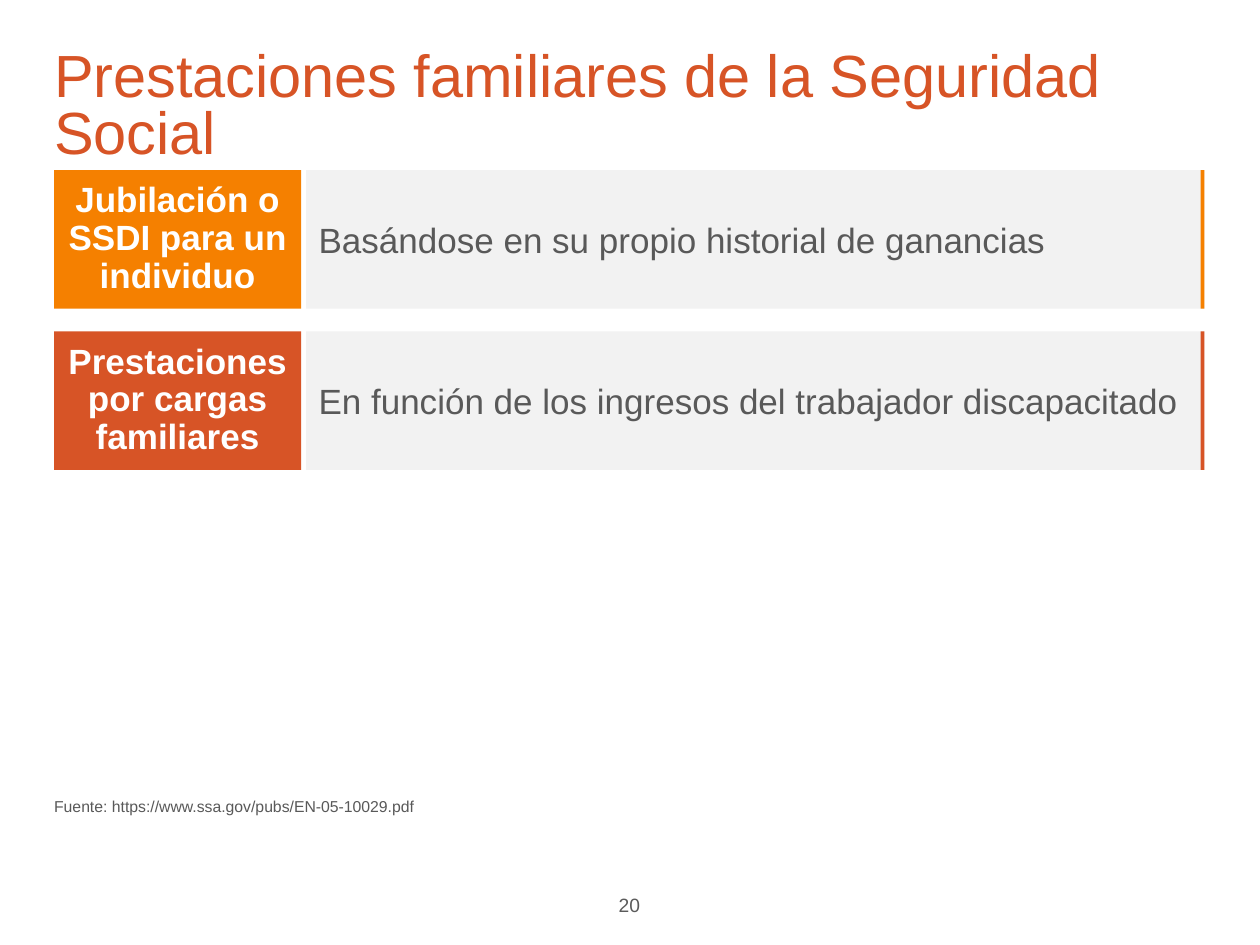
import pptx
import pptx.util
import pptx.dml.color
import pptx.enum.shapes
import pptx.enum.text

Inch = pptx.util.Inches
Align = pptx.enum.text.PP_ALIGN
Anchor = pptx.enum.text.MSO_ANCHOR

LEFT, TOP, PITCH, HIGH = 0.43, 1.35, 1.28, 1.1
GREY = "595959"
ROWS = [
    ("Jubilación o SSDI para un individuo",
     "Basándose en su propio historial de ganancias", "F58000"),
    ("Prestaciones por cargas familiares",
     "En función de los ingresos del trabajador discapacitado", "D75426"),
]


def paint(target, color):
    """Give a fill or a font a solid colour."""
    if hasattr(target, "solid"):
        target.solid()
        target = target.fore_color
    else:
        target = target.color
    target.rgb = pptx.dml.color.RGBColor.from_string(color)


def write(shape, text, size, color, pad=(0.1, 0.05), bold=False,
          align=Align.LEFT, anchor=Anchor.TOP, space=1.0):
    """Set the text; pad is the side and the top/bottom margin in inches."""
    side, edge = (Inch(value) for value in pad)
    frame = shape.text_frame
    form = {"margin_left": side, "margin_right": side, "margin_top": edge,
            "margin_bottom": edge, "word_wrap": True,
            "vertical_anchor": anchor,
            "auto_size": pptx.enum.text.MSO_AUTO_SIZE.NONE}
    for name, value in form.items():
        setattr(frame, name, value)
    frame.text = text
    line = frame.paragraphs[0]
    line.alignment, line.line_spacing = align, space
    font = line.runs[0].font
    font.name, font.size, font.bold = "Arial", pptx.util.Pt(size), bold
    paint(font, color)


def block(slide, box, color):
    shape = slide.shapes.add_shape(
        pptx.enum.shapes.MSO_SHAPE.RECTANGLE, *map(Inch, box))
    shape.shadow.inherit = False
    paint(shape.fill, color)
    shape.line.fill.background()
    return shape


def label(slide, box, text, size, color, **form):
    write(slide.shapes.add_textbox(*map(Inch, box)), text, size, color, **form)


def title(slide, box, text):
    shape = slide.shapes.title
    shape.left, shape.top, shape.width, shape.height = map(Inch, box)
    write(shape, text, 34, "D75426", pad=(0, 0), space=0.8)


def band(slide, top, head, text, color):
    """Draw one row: coloured heading, grey panel and edge strip."""
    form = {"pad": (0.1, 0.07), "anchor": Anchor.MIDDLE}
    write(block(slide, (LEFT, top, 1.96, HIGH), color), head, 20, "FFFFFF",
          bold=True, align=Align.CENTER, space=0.9, **form)
    write(block(slide, (2.43, top, 7.13, HIGH), "F2F2F2"), text, 20, GREY,
          **form)
    block(slide, (9.53, top, 0.03, HIGH), color)


def main():
    deck = pptx.Presentation()
    deck.slide_width, deck.slide_height = Inch(10), Inch(7.5)
    slide = deck.slides.add_slide(deck.slide_layouts[5])
    title(slide, (LEFT, 0.41, 9.12, 0.78),
          "Prestaciones familiares de la Seguridad Social")
    for row, (head, text, color) in enumerate(ROWS):
        band(slide, TOP + row * PITCH, head, text, color)
    label(slide, (LEFT, 6.32, 7.04, 0.15),
          "Fuente: https://www.ssa.gov/pubs/EN-05-10029.pdf", 9, GREY,
          pad=(0, 0))
    label(slide, (4.68, 7.04, 0.63, 0.46), "20", 11, "5B5B5B",
          align=Align.CENTER)
    deck.save("out.pptx")


if __name__ == "__main__":
    main()
